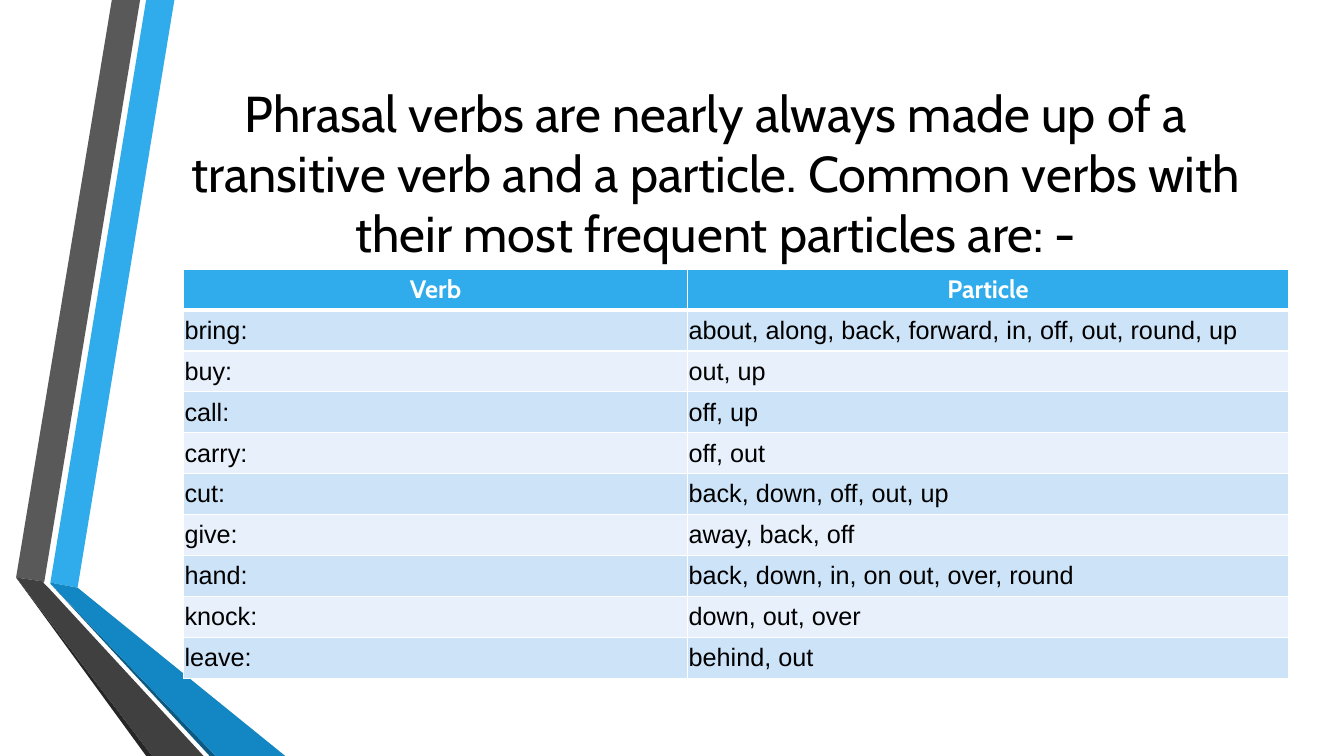
from dataclasses import dataclass

from lxml.etree import SubElement
from pptx import Presentation
from pptx.dml.color import RGBColor
from pptx.enum.text import MSO_ANCHOR as Anchor, PP_ALIGN as Align
from pptx.oxml.ns import qn
from pptx.util import Inches, Pt


@dataclass(frozen=True)
class Theme:
    """Colours, fonts and type sizes of the slide."""
    blue: str = "30ACEC"
    blue_side: str = "1287C3"
    blue_edge: str = "0C5A82"
    grey: str = "595959"
    grey_side: str = "404040"
    grey_edge: str = "262626"
    band_dark: str = "CDE3F8"
    band_light: str = "E8F1FB"
    black: str = "000000"
    white: str = "FFFFFF"
    heading_font: str = "Cabin"
    body_font: str = "Arial"
    title_size: int = 36
    table_size: int = 18


@dataclass(frozen=True)
class Ribbon:
    """One filled outline of the ribbon, with its corners in inches."""
    color: str
    corners: tuple


@dataclass(frozen=True)
class CellStyle:
    """Look of one kind of table cell."""
    fill: str
    color: str
    font: str
    bold: bool
    align: Align
    frame: dict
    top_line: float = 1
    bottom_line: float = 1


THEME = Theme()
RIBBONS = (
    Ribbon(THEME.blue, ((0.5, 5.78), (0.77, 5.83), (1.73, 0), (1.45, 0))),
    Ribbon(THEME.grey, ((1.39, 0), (1.11, 0), (0.16, 5.73), (0.44, 5.77))),
    Ribbon(THEME.grey_edge, ((0.16, 5.73), (1.45, 7.5), (1.51, 7.5))),
    Ribbon(THEME.blue_edge, ((0.5, 5.79), (2.08, 7.5), (2.14, 7.5))),
    Ribbon(THEME.blue_side, ((0.5, 5.79), (2.14, 7.5), (2.83, 7.5), (0.77, 5.83), (0.5, 5.78))),
    Ribbon(THEME.grey_side, ((2.02, 7.5), (0.48, 5.83), (0.43, 5.78), (0.44, 5.77),
                             (0.16, 5.73), (1.51, 7.5))),
)
TITLE = ("Phrasal verbs are nearly always made up of a transitive verb and a particle. "
         "Common verbs with their most frequent particles are: -")
HEADER = ("Verb", "Particle")
VERBS = (
    ("bring:", "about, along, back, forward, in, off, out, round, up"),
    ("buy:", "out, up"),
    ("call:", "off, up"),
    ("carry:", "off, out"),
    ("cut:", "back, down, off, out, up"),
    ("give:", "away, back, off"),
    ("hand:", "back, down, in, on out, over, round"),
    ("knock:", "down, out, over"),
    ("leave:", "behind, out"),
)
COLUMN_WIDTHS = (5, 5.96)
TABLE_HEIGHT = 4.06
HEADER_LINE = 3
TIGHT_FRAME = {"vertical_anchor": Anchor.MIDDLE} | {
    f"margin_{side}": Inches(0.01) for side in ("left", "right", "top", "bottom")}


def apply_format(target: object, values: dict) -> None:
    """Set each named attribute on the target."""
    for name, value in values.items():
        setattr(target, name, value)


def write_text(paragraph, text: str, color: str, align: Align, font: dict) -> None:
    """Write one formatted run into a paragraph."""
    paragraph.alignment = align
    run = paragraph.add_run()
    run.text = text
    apply_format(run.font, font)
    run.font.color.rgb = RGBColor.from_string(color)


def draw_ribbon(slide, ribbon: Ribbon) -> None:
    """Draw one flat ribbon outline."""
    start, *others = [(Inches(x), Inches(y)) for x, y in ribbon.corners]
    builder = slide.shapes.build_freeform(*start)
    builder.add_line_segments(others, close=True)
    shape = builder.convert_to_shape()
    shape.shadow.inherit = False
    shape.fill.solid()
    shape.fill.fore_color.rgb = RGBColor.from_string(ribbon.color)
    shape.line.fill.background()


def draw_title(slide) -> None:
    """Place and format the title placeholder."""
    title = slide.shapes.title
    apply_format(title, {"left": Inches(1.62), "top": Inches(0.75),
                         "width": Inches(10.96), "height": Inches(1.92)})
    apply_format(title.text_frame, {"vertical_anchor": Anchor.MIDDLE, "word_wrap": True})
    write_text(title.text_frame.paragraphs[0], TITLE, THEME.black, Align.CENTER,
               {"name": THEME.heading_font, "size": Pt(THEME.title_size)})


def add_borders(cell, style: CellStyle) -> None:
    """Give a cell white lines on its four sides."""
    properties = cell._tc.get_or_add_tcPr()
    widths = {"lnL": 1, "lnR": 1, "lnT": style.top_line, "lnB": style.bottom_line}
    for tag, width in widths.items():
        line = SubElement(properties, qn(f"a:{tag}"), w=str(Pt(width)))
        fill = SubElement(line, qn("a:solidFill"))
        SubElement(fill, qn("a:srgbClr"), val=THEME.white)


def draw_cell(cell, text: str, style: CellStyle) -> None:
    """Fill one table cell with its text and look."""
    add_borders(cell, style)
    cell.fill.solid()
    cell.fill.fore_color.rgb = RGBColor.from_string(style.fill)
    apply_format(cell, style.frame)
    write_text(cell.text_frame.paragraphs[0], text, style.color, style.align,
               {"name": style.font, "size": Pt(THEME.table_size), "bold": style.bold})


def row_style(row: int) -> CellStyle:
    """Choose the header look or the banded body look."""
    if row == 0:
        return CellStyle(THEME.blue, THEME.white, THEME.heading_font, True, Align.CENTER,
                         {}, bottom_line=HEADER_LINE)
    band = THEME.band_dark if row % 2 else THEME.band_light
    return CellStyle(band, THEME.black, THEME.body_font, False, Align.LEFT, TIGHT_FRAME,
                     top_line=HEADER_LINE if row == 1 else 1)


def draw_table(slide) -> None:
    """Draw the table of verbs and particles."""
    rows = (HEADER, *VERBS)
    table = slide.shapes.add_table(
        len(rows), len(HEADER), Inches(1.82), Inches(2.67),
        Inches(sum(COLUMN_WIDTHS)), Inches(TABLE_HEIGHT)).table
    for column, width in zip(table.columns, COLUMN_WIDTHS):
        column.width = Inches(width)
    for row, texts in enumerate(rows):
        for column, text in enumerate(texts):
            draw_cell(table.cell(row, column), text, row_style(row))


def main() -> None:
    """Build and save the slide."""
    presentation = Presentation()
    apply_format(presentation, {"slide_width": Inches(13.33), "slide_height": Inches(7.5)})
    slide = presentation.slides.add_slide(presentation.slide_layouts.get_by_name("Title Only"))
    for ribbon in RIBBONS:
        draw_ribbon(slide, ribbon)
    draw_title(slide)
    draw_table(slide)
    presentation.save("out.pptx")


if __name__ == "__main__":
    main()
